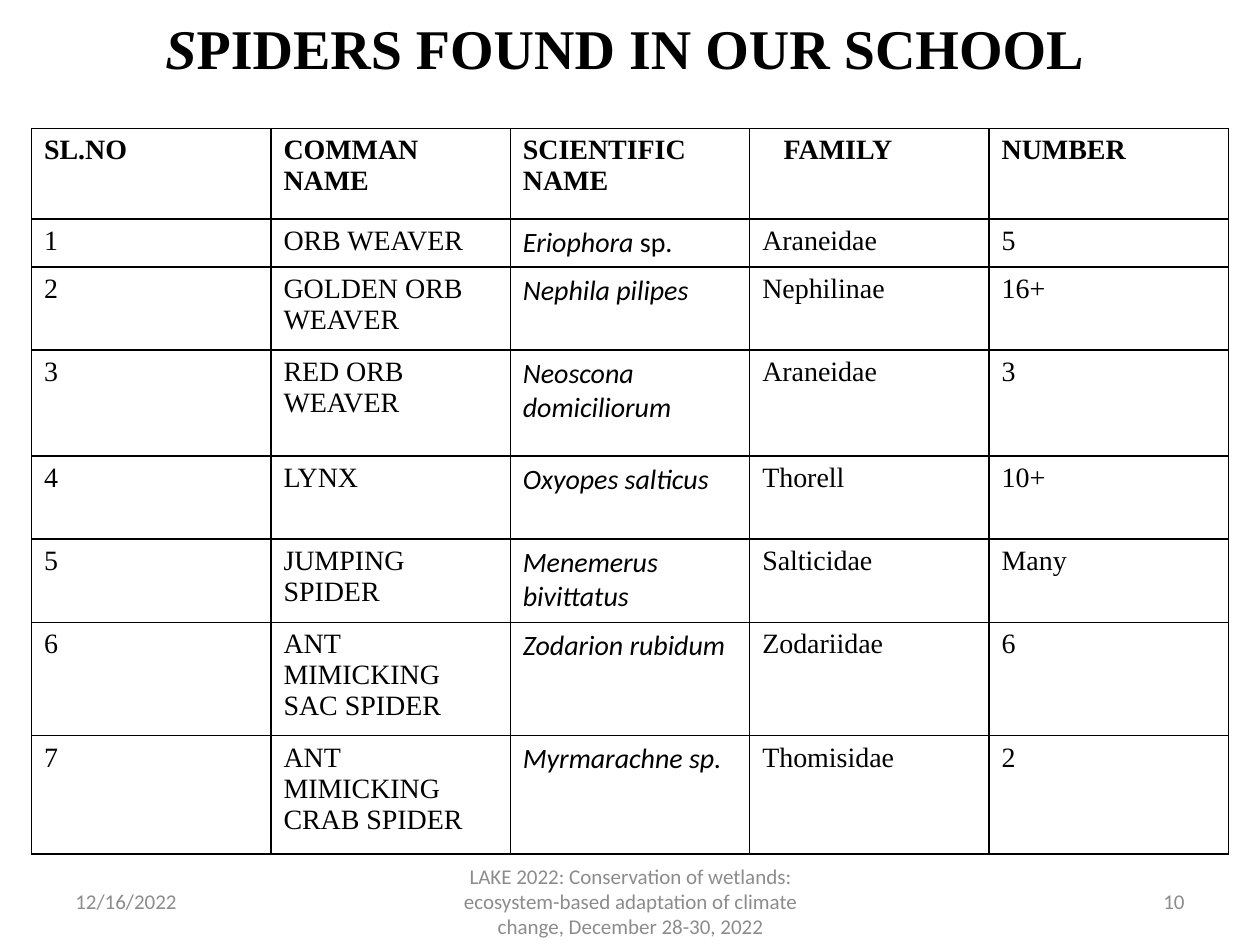
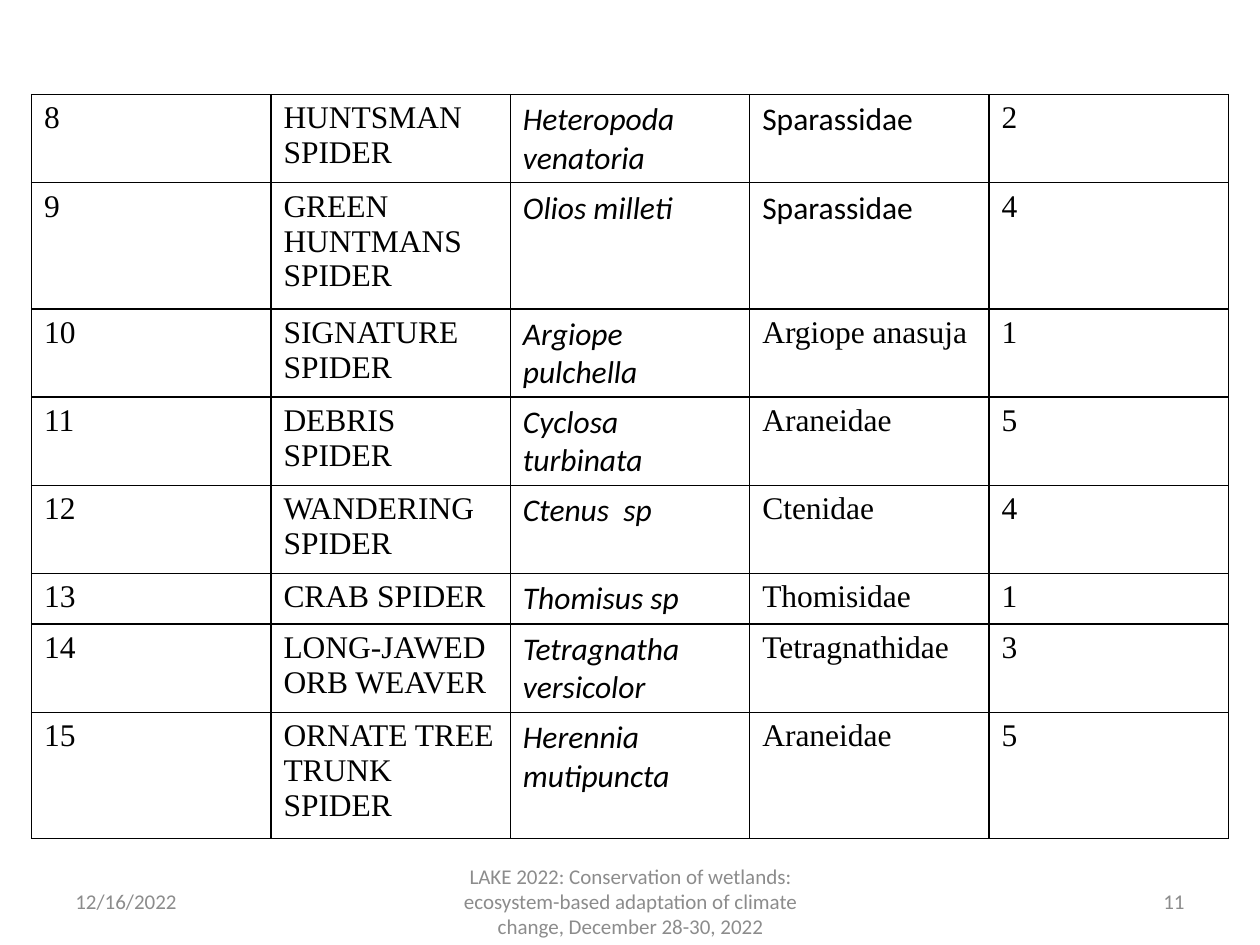
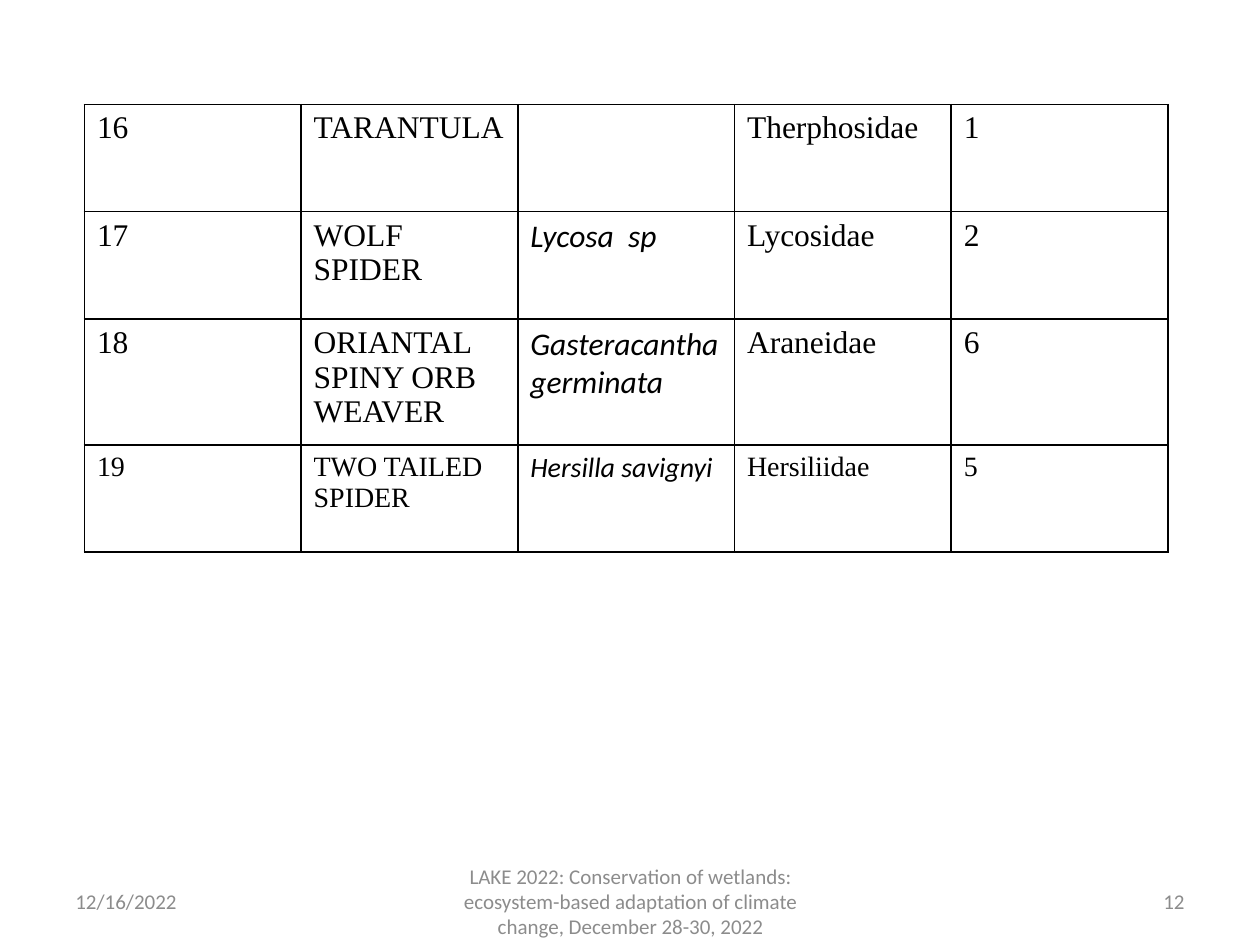
from dataclasses import dataclass

from lxml import etree
from pptx import Presentation
from pptx import util as u
from pptx.dml.color import RGBColor
from pptx.enum import text
from pptx.oxml import ns

COLORS = {"ink": "000000", "footer": "8C8C8C"}
SERIF, SANS = "Times New Roman", "Calibri"
ALIGN = text.PP_ALIGN
FOOTER_TOP, FOOTER_HEIGHT, FOOTER_SIZE = 6.95, 0.4, 12
FIRST_PAGE = 10
DATE = "12/16/2022"
EVENT = ("LAKE 2022: Conservation of wetlands: ecosystem-based adaptation "
         "of climate change, December 28-30, 2022")
HEADINGS = ["SL.NO", "COMMAN NAME", "SCIENTIFIC NAME", "FAMILY", "NUMBER"]
HEADING_HEIGHT = 0.72
FAMILY_INDENT = 0.27
TITLE_SIZE = 32


@dataclass(frozen=True)
class Run:
    text: str
    size: float
    font: str = SERIF
    bold: bool = False
    italic: bool = False
    color: str = "ink"


@dataclass(frozen=True)
class Box:
    left: float
    top: float
    width: float
    height: float


@dataclass(frozen=True)
class Spider:
    common: str
    scientific: str
    family: str
    count: str
    height: float
    rank: str = ""  # upright ending of the scientific name
    family_font: str = SERIF
    size: float | None = None


@dataclass(frozen=True)
class SpiderPage:
    left: float
    top: float
    column: float
    size: float
    spiders: list[Spider]
    title: str = ""


PAGES = [
    SpiderPage(0.25, 1.02, 1.9, 16, [
        Spider("ORB WEAVER", "Eriophora", "Araneidae", "5", 0.38, rank=" sp."),
        Spider("GOLDEN ORB WEAVER", "Nephila pilipes", "Nephilinae", "16+", 0.66),
        Spider("RED ORB WEAVER", "Neoscona domiciliorum", "Araneidae", "3", 0.84),
        Spider("LYNX", "Oxyopes salticus", "Thorell", "10+", 0.66),
        Spider("JUMPING SPIDER", "Menemerus bivittatus", "Salticidae", "Many", 0.66),
        Spider("ANT MIMICKING SAC SPIDER", "Zodarion rubidum", "Zodariidae", "6", 0.86),
        Spider("ANT MIMICKING CRAB SPIDER", "Myrmarachne sp.", "Thomisidae", "2", 0.94),
    ], title="SPIDERS FOUND IN OUR SCHOOL"),
    SpiderPage(0.25, 0.75, 1.9, 18, [
        Spider("HUNTSMAN SPIDER", "Heteropoda venatoria", "Sparassidae", "2", 0.66,
               family_font=SANS),
        Spider("GREEN HUNTMANS SPIDER", "Olios milleti", "Sparassidae", "4", 0.95,
               family_font=SANS),
        Spider("SIGNATURE SPIDER", "Argiope pulchella", "Argiope anasuja", "1", 0.66),
        Spider("DEBRIS SPIDER", "Cyclosa turbinata", "Araneidae", "5", 0.66),
        Spider("WANDERING SPIDER", "Ctenus  sp", "Ctenidae", "4", 0.66),
        Spider("CRAB SPIDER", "Thomisus sp", "Thomisidae", "1", 0.38),
        Spider("LONG-JAWED ORB WEAVER", "Tetragnatha versicolor", "Tetragnathidae",
               "3", 0.66),
        Spider("ORNATE TREE TRUNK SPIDER", "Herennia mutipuncta", "Araneidae",
               "5", 0.95),
    ]),
    SpiderPage(0.67, 0.83, 1.72, 18, [
        Spider("TARANTULA", "", "Therphosidae", "1", 0.85),
        Spider("WOLF SPIDER", "Lycosa  sp", "Lycosidae", "2", 0.85),
        Spider("ORIANTAL SPINY ORB WEAVER", "Gasteracantha germinata", "Araneidae",
               "6", 0.85),
        Spider("TWO TAILED SPIDER", "Hersilla savignyi", "Hersiliidae", "5", 0.85,
               size=16),
    ]),
]


def add_runs(p, runs: list[Run]) -> None:
    for run in runs:
        r = p.add_run()
        r.text = run.text
        r.font.size = u.Pt(run.size)
        r.font.name = run.font
        r.font.bold = run.bold
        r.font.italic = run.italic
        r.font.color.rgb = RGBColor.from_string(COLORS[run.color])


def add_text(slide, box: Box, runs: list[Run], align=ALIGN.LEFT) -> None:
    sp = slide.shapes.add_textbox(u.Inches(box.left), u.Inches(box.top),
                                  u.Inches(box.width), u.Inches(box.height))
    tf = sp.text_frame
    tf.word_wrap = True
    tf.vertical_anchor = text.MSO_ANCHOR.MIDDLE
    p = tf.paragraphs[0]
    p.alignment = align
    add_runs(p, runs)


def add_title(slide, title: str) -> None:
    """Title whose first letter is italic."""
    add_text(slide, Box(0.5, 0, 8.92, 0.75),
             [Run(title[0], TITLE_SIZE, bold=True, italic=True),
              Run(title[1:], TITLE_SIZE, bold=True)], ALIGN.CENTER)


def add_footer(slide, page_number: int) -> None:
    for left, width, words, align in (
            (0.5, 2.33, DATE, ALIGN.LEFT),
            (3.42, 3.17, EVENT, ALIGN.CENTER),
            (7.17, 2.33, str(page_number), ALIGN.RIGHT)):
        add_text(slide, Box(left, FOOTER_TOP, width, FOOTER_HEIGHT),
                 [Run(words, FOOTER_SIZE, SANS, color="footer")], align)


def style_cell(cell) -> None:
    """Give the cell a thin border on all sides and no fill."""
    tc_pr = cell._tc.get_or_add_tcPr()
    for side in ("a:lnL", "a:lnR", "a:lnT", "a:lnB"):
        ln = etree.SubElement(tc_pr, ns.qn(side), w=str(u.Pt(1)))
        fill = etree.SubElement(ln, ns.qn("a:solidFill"))
        etree.SubElement(fill, ns.qn("a:srgbClr"), val=COLORS["ink"])
    cell.fill.background()


def spider_cells(number: int, spider: Spider, size: float) -> list[list[Run]]:
    scientific = [Run(spider.scientific, size, SANS, italic=True),
                  Run(spider.rank, size, SANS)]
    return [[Run(str(number), size)],
            [Run(spider.common, size)],
            [run for run in scientific if run.text],
            [Run(spider.family, size, spider.family_font)],
            [Run(spider.count, size)]]


def add_spider_table(slide, page: SpiderPage, first_number: int) -> None:
    rows = [spider_cells(n, spider, spider.size or page.size)
            for n, spider in enumerate(page.spiders, first_number)]
    heights = [spider.height for spider in page.spiders]
    if page.title:
        rows.insert(0, [[Run(h, page.size, bold=True)] for h in HEADINGS])
        heights.insert(0, HEADING_HEIGHT)

    columns = len(HEADINGS)
    table = slide.shapes.add_table(
        len(rows), columns, u.Inches(page.left), u.Inches(page.top),
        u.Inches(page.column * columns), u.Inches(sum(heights))).table
    table.first_row = table.horz_banding = False
    for column in table.columns:
        column.width = u.Inches(page.column)
    for i, (cells, height) in enumerate(zip(rows, heights)):
        table.rows[i].height = u.Inches(height)
        for j, runs in enumerate(cells):
            cell = table.cell(i, j)
            style_cell(cell)
            add_runs(cell.text_frame.paragraphs[0], runs)
    if page.title:
        table.cell(0, HEADINGS.index("FAMILY")).margin_left = u.Inches(FAMILY_INDENT)


def main() -> None:
    prs = Presentation()
    prs.slide_width, prs.slide_height = u.Inches(10), u.Inches(7.5)
    first_number = 1
    for page_number, page in enumerate(PAGES, FIRST_PAGE):
        slide = prs.slides.add_slide(prs.slide_layouts[6])
        if page.title:
            add_title(slide, page.title)
        add_spider_table(slide, page, first_number)
        add_footer(slide, page_number)
        first_number += len(page.spiders)
    prs.save("out.pptx")


if __name__ == "__main__":
    main()
